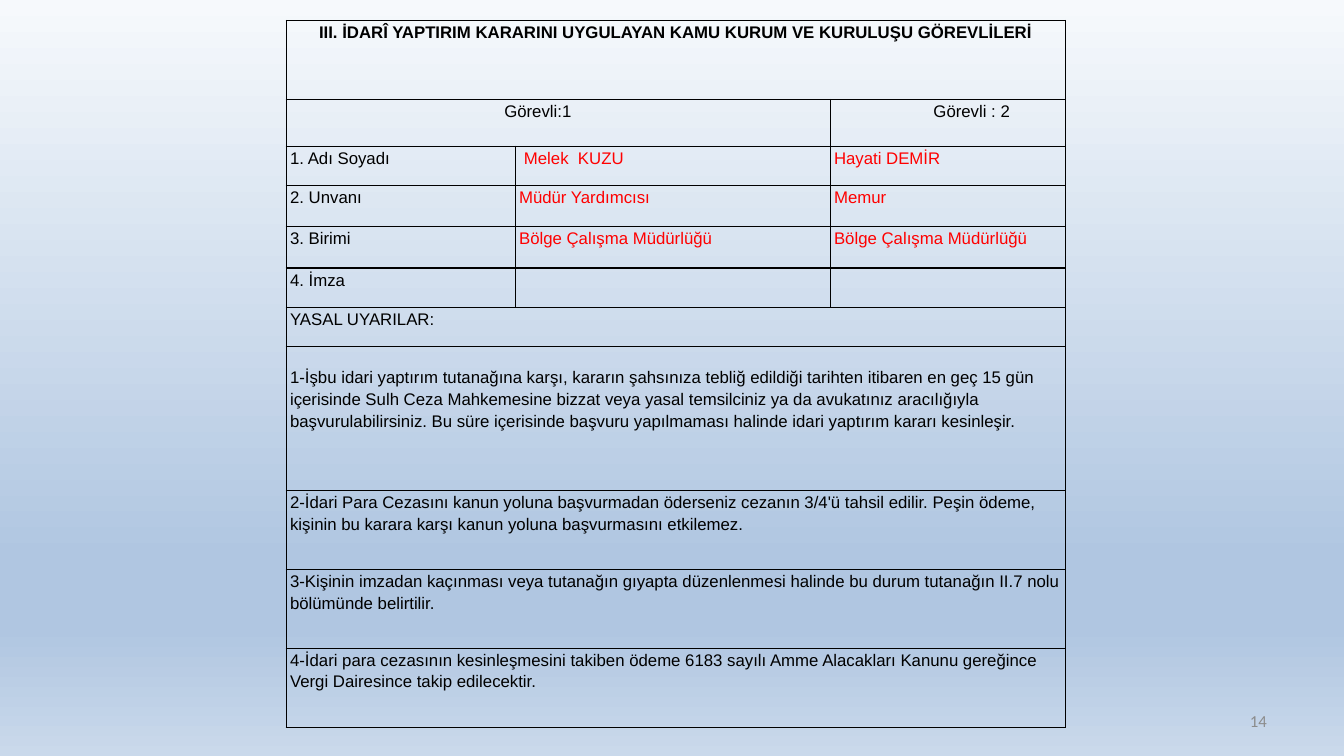
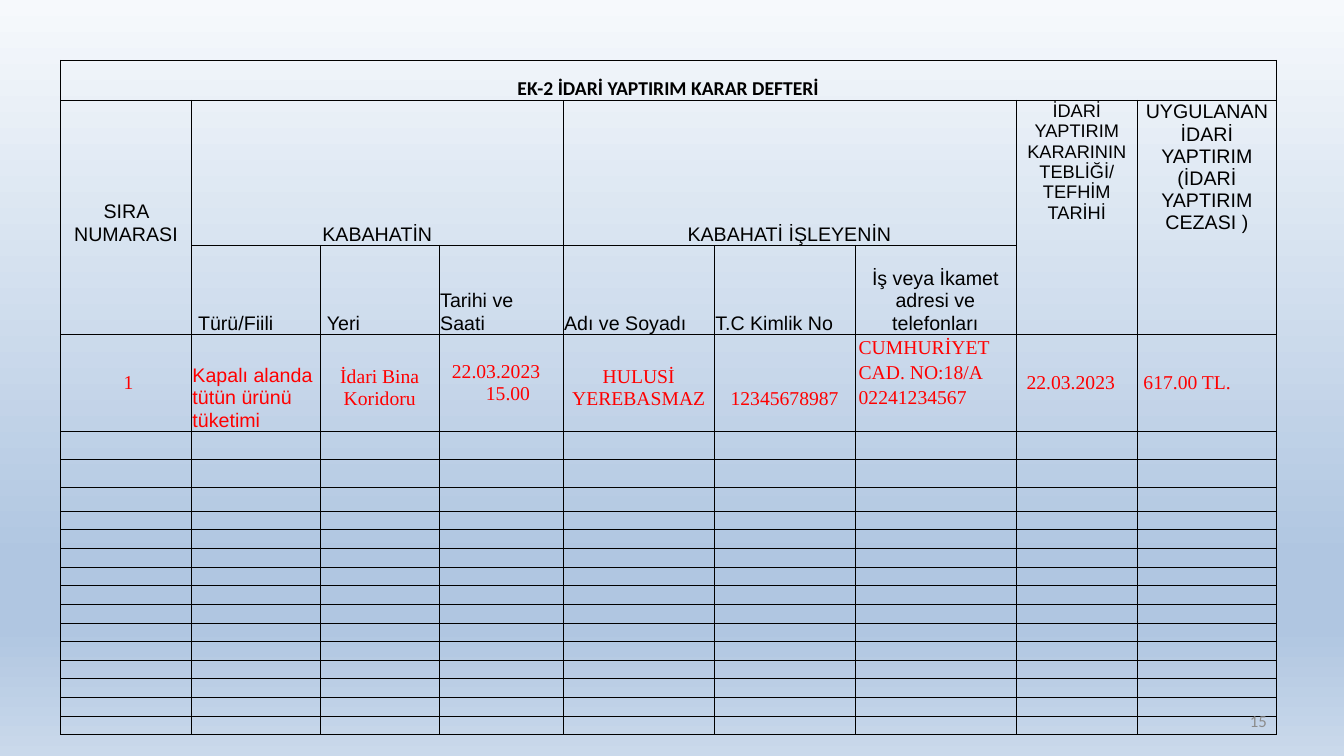
from dataclasses import dataclass

from lxml import etree
from pptx import Presentation
from pptx.dml.color import RGBColor
from pptx.enum import text
from pptx.oxml import ns
from pptx.util import Pt


@dataclass(frozen=True)
class Theme:
    ink: str = "000000"
    entry: str = "FF0000"
    muted: str = "8C8C8C"
    sky: tuple = ((0, "F6F9FC"), (74, "B0C6E1"), (83, "B0C6E1"), (100, "CAD9EB"))
    sans: str = "Arial"
    heading: str = "Calibri"
    serif: str = "Times New Roman"
    small: int = 12
    narrow: int = 13
    normal: int = 14
    blank: int = 8


THEME = Theme()
LEFT, CENTER, RIGHT = (text.PP_ALIGN.LEFT, text.PP_ALIGN.CENTER, text.PP_ALIGN.RIGHT)
TOP, MIDDLE, BOTTOM = (text.MSO_ANCHOR.TOP, text.MSO_ANCHOR.MIDDLE, text.MSO_ANCHOR.BOTTOM)


@dataclass
class Cell:
    """Content and look of one table cell; a tuple of lines makes paragraphs."""
    lines: tuple = ()
    size: float = THEME.small
    font: str = THEME.sans
    color: str = THEME.ink
    bold: bool = False
    align: int = LEFT
    anchor: int = TOP
    indents: tuple = (0,)
    spacing: float = 1.0
    margins: tuple = (0.7, 0.7, 0.7, 0)  # left, top, right, bottom
    span: tuple = (1, 1)


def form(line="", **look):
    """Cell of the officers' form."""
    return Cell((line,), **{"spacing": 1.15, "margins": (2.7, 0, 2.7, 0), **look})


def head(line, **look):
    """Header cell of the register."""
    return Cell((line,), **{"size": THEME.normal, "align": CENTER, "anchor": BOTTOM, **look})


def entry(*lines, **look):
    """Filled-in cell of the register."""
    return Cell(lines, **{"size": THEME.normal, "font": THEME.serif, "color": THEME.entry,
                          "anchor": MIDDLE, **look})


class Deck:
    def __init__(self, theme):
        self.theme = theme
        self.deck = Presentation()
        self.deck.slide_width, self.deck.slide_height = Pt(960), Pt(540)
        self.page = None
        self.paint_background()

    def paint_background(self):
        fill = self.deck.slide_master.background.fill
        fill.gradient()
        fill.gradient_angle = 270
        stops = fill.gradient_stops._gsLst
        for stop in list(stops):
            stops.remove(stop)
        for position, color in self.theme.sky:
            stop = etree.SubElement(stops, ns.qn("a:gs"), pos=str(position * 1000))
            etree.SubElement(stop, ns.qn("a:srgbClr"), val=color)

    def add_page(self, number):
        self.page = self.deck.slides.add_slide(self.deck.slide_layouts[6])
        self.number = number

    def style(self, para, size, font, color, bold=False, align=LEFT):
        para.alignment = align
        para.font.size, para.font.name, para.font.bold = Pt(size), font, bold
        para.font.color.rgb = RGBColor.from_string(color)

    def page_number(self):
        box = self.page.shapes.add_textbox(Pt(688), Pt(500), Pt(224), Pt(29))
        frame = box.text_frame
        frame.word_wrap, frame.vertical_anchor = True, MIDDLE
        para = frame.paragraphs[0]
        para.text = str(self.number)
        self.style(para, self.theme.small, self.theme.heading, self.theme.muted, align=RIGHT)

    def borders(self, cell, width, open_sides):
        props = cell._tc.get_or_add_tcPr()
        for side in "LRTB":
            line = etree.SubElement(props, ns.qn("a:ln" + side), w=str(Pt(width)))
            if side in open_sides:
                etree.SubElement(line, ns.qn("a:noFill"))
            else:
                solid = etree.SubElement(line, ns.qn("a:solidFill"))
                etree.SubElement(solid, ns.qn("a:srgbClr"), val=self.theme.ink)

    def fill_cell(self, cell, content):
        (cell.margin_left, cell.margin_top,
         cell.margin_right, cell.margin_bottom) = map(Pt, content.margins)
        cell.vertical_anchor = content.anchor
        frame = cell.text_frame
        for index, line in enumerate(content.lines or ("",)):
            para = frame.add_paragraph() if index else frame.paragraphs[0]
            if line:
                para.text = line
            else:
                para._p.get_or_add_endParaRPr().set("sz", str(content.size * 100))
            indent = content.indents[min(index, len(content.indents) - 1)]
            para._p.get_or_add_pPr().set("marL", str(Pt(indent)))
            para.line_spacing = content.spacing
            self.style(para, content.size, content.font, content.color,
                       content.bold, content.align)

    def table(self, left, top, columns, heights, cells, border, open_below=()):
        frame = self.page.shapes.add_table(len(heights), len(columns), Pt(left), Pt(top),
                                           Pt(sum(columns)), Pt(sum(heights)))
        grid = frame.table
        grid.first_row = grid.horz_banding = False
        for column, width in zip(grid.columns, columns):
            column.width = Pt(width)
        for row, height in zip(grid.rows, heights):
            row.height = Pt(height)
        empty = Cell(size=self.theme.blank, margins=(0, 0, 0, 0))
        for r in range(len(heights)):
            for c in range(len(columns)):
                cell = grid.cell(r, c)
                content = cells.get((r, c), empty)
                open_sides = ("B" if (r, c) in open_below else "") + (
                    "T" if (r - 1, c) in open_below else "")
                self.borders(cell, border, open_sides)
                cell.fill.background()
                self.fill_cell(cell, content)
                if content.span != (1, 1):
                    rows, cols = content.span
                    cell.merge(grid.cell(r + rows - 1, c + cols - 1))


def officers_form(deck):
    deck.add_page(14)
    cells = {
        (0, 0): form("III. İDARÎ YAPTIRIM KARARINI UYGULAYAN KAMU KURUM VE KURULUŞU GÖREVLİLERİ",
                     bold=True, align=CENTER, span=(1, 3)),
        (1, 0): form("Görevli:1", indents=(153,), span=(1, 2)),
        (1, 2): form("Görevli : 2", indents=(71,)),
        (5, 0): form("4. İmza"),
    }
    # Officer details
    details = [
        ("1. Adı Soyadı", "Melek  KUZU", "Hayati DEMİR"),
        ("2. Unvanı", "Müdür Yardımcısı", "Memur"),
        ("3. Birimi", "Bölge Çalışma Müdürlüğü", "Bölge Çalışma Müdürlüğü"),
    ]
    for r, (label, first, second) in enumerate(details, 2):
        cells[r, 0] = form(label)
        cells[r, 1] = form(first, color=THEME.entry, indents=(3.5 if r == 2 else 0,))
        cells[r, 2] = form(second, color=THEME.entry)
    # Legal notices
    notices = [
        "YASAL UYARILAR:",
        "1-İşbu idari yaptırım tutanağına karşı, kararın şahsınıza tebliğ edildiği tarihten "
        "itibaren en geç 15 gün içerisinde Sulh Ceza Mahkemesine bizzat veya yasal temsilciniz "
        "ya da avukatınız aracılığıyla başvurulabilirsiniz. Bu süre içerisinde başvuru "
        "yapılmaması halinde idari yaptırım kararı kesinleşir.",
        "2-İdari Para Cezasını kanun yoluna başvurmadan öderseniz cezanın 3/4'ü tahsil edilir. "
        "Peşin ödeme, kişinin bu karara karşı kanun yoluna başvurmasını etkilemez.",
        "3-Kişinin imzadan kaçınması veya tutanağın gıyapta düzenlenmesi halinde bu durum "
        "tutanağın II.7 nolu bölümünde belirtilir.",
        "4-İdari para cezasının kesinleşmesini takiben ödeme 6183 sayılı Amme Alacakları Kanunu "
        "gereğince Vergi Dairesince takip edilecektir.",
    ]
    for r, notice in enumerate(notices, 6):
        cells[r, 0] = form(notice, span=(1, 3))
    cells[7, 0].margins = (2.7, 14, 2.7, 0)
    heights = [56.4, 33.4, 28, 29.3, 29.8, 28, 28, 102.9] + [56.4] * 3
    deck.table(204.5, 14.6, [163.6, 225, 168], heights, cells, border=1)
    deck.page_number()


def decision_register(deck):
    deck.add_page(15)
    raised = (0.7, 0.7, 0.7, 15.5)
    cells = {
        # Headers
        (0, 0): head("EK-2 İDARİ YAPTIRIM KARAR DEFTERİ", font=THEME.heading, bold=True,
                     span=(1, 9)),
        (1, 0): head("SIRA NUMARASI"),
        (1, 1): head("KABAHATİN", span=(1, 3)),
        (1, 4): head("KABAHATİ İŞLEYENİN", span=(1, 3)),
        (1, 7): head("İDARİ YAPTIRIM KARARININ TEBLİĞİ/ TEFHİM TARİHİ",
                     size=THEME.narrow, anchor=TOP, span=(2, 1)),
        (1, 8): head("UYGULANAN İDARİ YAPTIRIM (İDARİ YAPTIRIM CEZASI )", anchor=TOP),
        (2, 1): head("Türü/Fiili", align=LEFT, indents=(4,)),
        (2, 2): head("Yeri", align=LEFT, indents=(4,)),
        (2, 3): head("Tarihi ve Saati", align=LEFT),
        (2, 4): head("Adı ve Soyadı", align=LEFT),
        (2, 5): head("T.C Kimlik No", align=LEFT),
        (2, 6): head("İş veya İkamet adresi ve telefonları"),
        # First record
        (3, 0): entry("1", align=CENTER, indents=(3.5,)),
        (3, 1): entry("Kapalı alanda tütün ürünü tüketimi", font=THEME.sans, anchor=BOTTOM),
        (3, 2): entry("İdari Bina Koridoru", align=CENTER, anchor=BOTTOM, margins=raised),
        (3, 3): entry("22.03.2023", "15.00", align=CENTER, indents=(0, 17),
                      margins=(0.7, 0.7, 8, 0)),
        (3, 4): entry("HULUSİ YEREBASMAZ", align=CENTER, anchor=BOTTOM, margins=raised),
        (3, 5): entry("12345678987", align=CENTER, anchor=BOTTOM, margins=raised),
        (3, 6): entry("CUMHURİYET CAD. NO:18/A", "02241234567", anchor=TOP, spacing=1.15,
                      margins=(2.7, 0, 2.7, 0)),
        (3, 7): entry("22.03.2023", indents=(7,)),
        (3, 8): entry("617.00 TL.", indents=(3.5,)),
    }
    columns = [93.6, 92, 85, 88.5, 108, 100.4, 115, 87, 99]
    heights = [28.6, 103.6, 63.6, 69.3, 20, 20, 17] + [13.33] * 12
    deck.table(43.2, 43, columns, heights, cells, border=0.5, open_below={(1, 0), (1, 8)})
    deck.page_number()


def main():
    deck = Deck(THEME)
    officers_form(deck)
    decision_register(deck)
    deck.deck.save("out.pptx")


if __name__ == "__main__":
    main()
